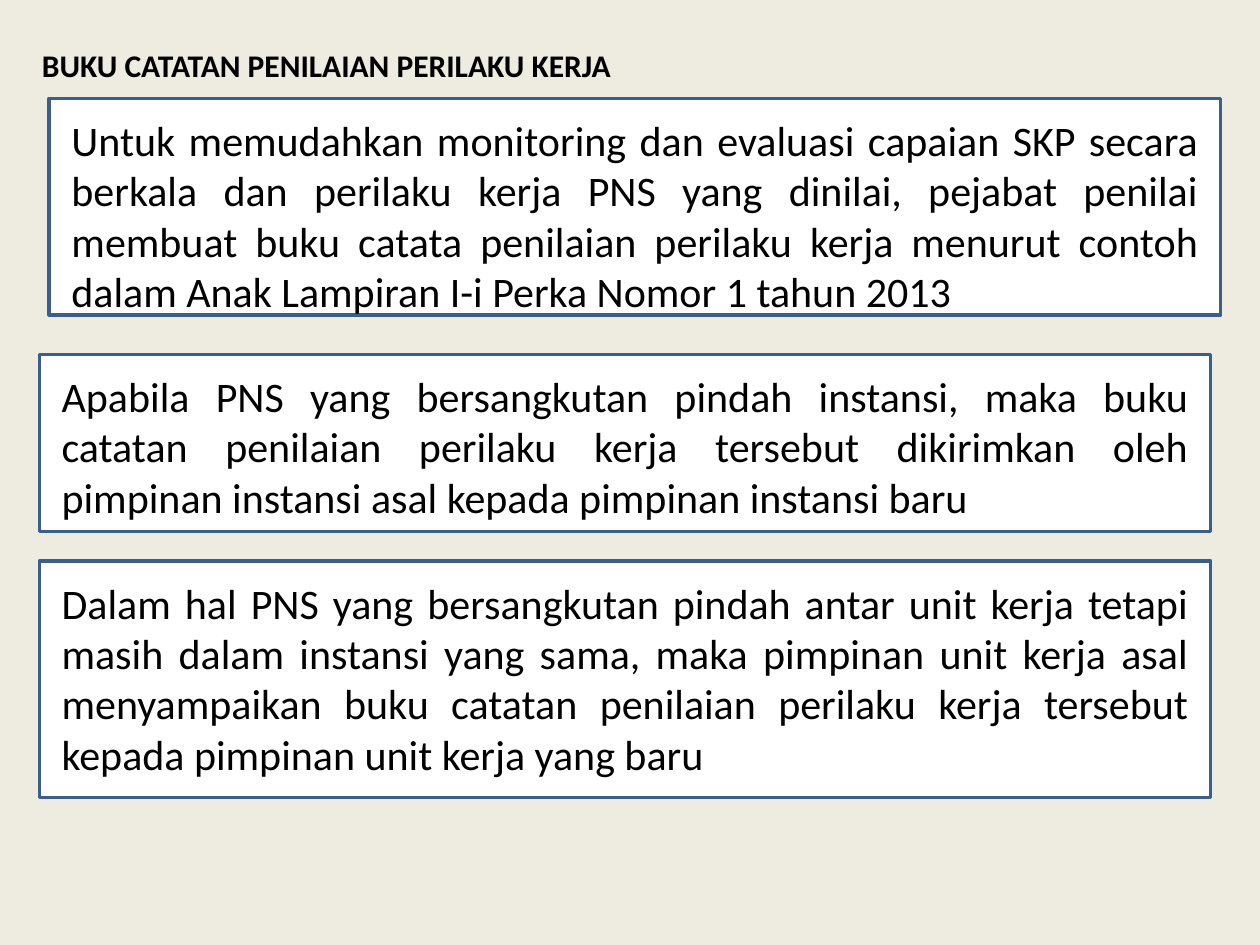
from dataclasses import dataclass

from pptx import Presentation, util as u
from pptx.dml.color import RGBColor
from pptx.enum import shapes, text

COLUMNS, ROWS = 128, 96


@dataclass(frozen=True)
class Theme:
    background: str = "EEECE1"
    panel: str = "FFFFFF"
    border: str = "3A5F8C"
    ink: str = "000000"
    font: str = "Calibri"
    title_size: int = 18
    body_size: int = 24
    border_width: int = 2


class SlideBuilder:
    def __init__(self, presentation, theme):
        self.theme = theme
        self.column = presentation.slide_width / COLUMNS
        self.row = presentation.slide_height / ROWS
        self.slide = presentation.slides.add_slide(presentation.slide_layouts[6])
        self.fill(self.slide.background, theme.background)

    @staticmethod
    def fill(target, color):
        target.fill.solid()
        target.fill.fore_color.rgb = RGBColor.from_string(color)

    def place(self, left, top, width, height):
        return (round(left * self.column), round(top * self.row),
                round(width * self.column), round(height * self.row))

    def text(self, words, area, size, bold=False, align=text.PP_ALIGN.LEFT):
        frame = self.slide.shapes.add_textbox(*self.place(*area)).text_frame
        frame.word_wrap = True
        frame.auto_size = text.MSO_AUTO_SIZE.SHAPE_TO_FIT_TEXT
        frame.text = words
        paragraph = frame.paragraphs[0]
        paragraph.alignment = align
        font = paragraph.runs[0].font
        font.name, font.size, font.bold = self.theme.font, u.Pt(size), bold
        font.color.rgb = RGBColor.from_string(self.theme.ink)

    def panel(self, words, left, top, height, text_height):
        # White box with the text inset by one grid unit
        shape = self.slide.shapes.add_shape(
            shapes.MSO_SHAPE.RECTANGLE, *self.place(left, top, 119, height))
        shape.shadow.inherit = False
        self.fill(shape, self.theme.panel)
        self.fill(shape.line, self.theme.border)
        shape.line.width = u.Pt(self.theme.border_width)
        self.text(words, (left + 1, top + 1, 117, text_height),
                  self.theme.body_size, align=text.PP_ALIGN.JUSTIFY)


# Left, top, box height and text height in grid units
PANELS = [
    ("Untuk memudahkan monitoring dan evaluasi capaian SKP secara berkala dan "
     "perilaku kerja PNS yang dinilai, pejabat penilai membuat buku catata "
     "penilaian perilaku kerja menurut contoh dalam Anak Lampiran I-i Perka "
     "Nomor 1 tahun 2013", 5, 10, 22, 22),
    ("Apabila PNS yang bersangkutan pindah instansi, maka buku catatan penilaian "
     "perilaku kerja tersebut dikirimkan oleh pimpinan instansi asal kepada "
     "pimpinan instansi baru", 4, 36, 18, 16.8),
    ("Dalam hal PNS yang bersangkutan pindah antar unit kerja tetapi masih dalam "
     "instansi yang sama, maka pimpinan unit kerja asal menyampaikan buku catatan "
     "penilaian perilaku kerja tersebut kepada pimpinan unit kerja yang baru",
     4, 57, 24, 22),
]


def main():
    presentation = Presentation()
    presentation.slide_width, presentation.slide_height = u.Inches(10), u.Inches(7.5)
    theme = Theme()
    builder = SlideBuilder(presentation, theme)

    # Heading
    builder.text("BUKU CATATAN PENILAIAN PERILAKU KERJA", (3, 4, 121, 5.2),
                 theme.title_size, bold=True)

    # Rules on the record book
    for panel in PANELS:
        builder.panel(*panel)

    presentation.save("out.pptx")


if __name__ == "__main__":
    main()
